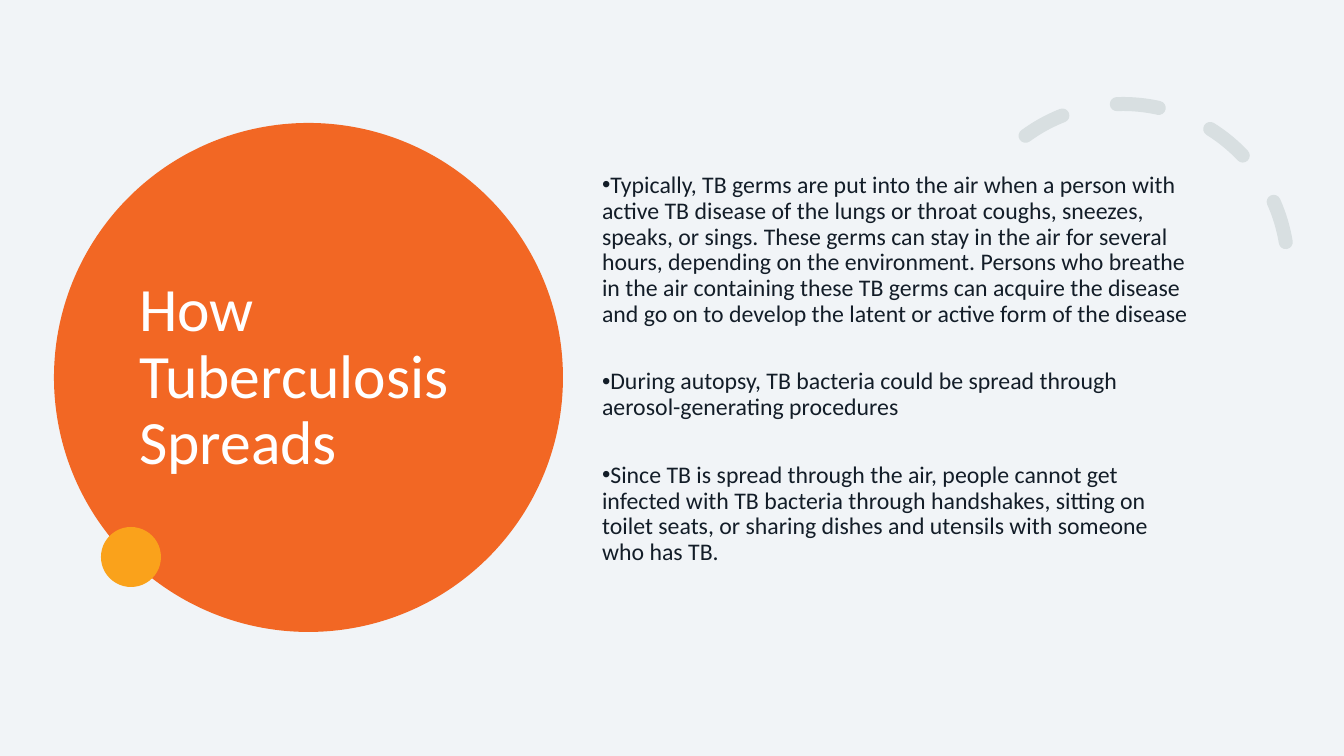
"""Build a slide on how tuberculosis spreads."""
from dataclasses import dataclass

import lxml.etree
import pptx
import pptx.dml.color
import pptx.enum.dml
import pptx.enum.shapes
import pptx.enum.text
import pptx.oxml.ns
import pptx.util

TITLE = "How Tuberculosis Spreads"
FACTS = [
    "Typically, TB germs are put into the air when a person with active TB disease of the lungs "
    "or throat coughs, sneezes, speaks, or sings. These germs can stay in the air for several "
    "hours, depending on the environment. Persons who breathe in the air containing these TB "
    "germs can acquire the disease and go on to develop the latent or active form of the disease",
    "During autopsy, TB bacteria could be spread through aerosol-generating procedures",
    "Since TB is spread through the air, people cannot get infected with TB bacteria through "
    "handshakes, sitting on toilet seats, or sharing dishes and utensils with someone who has TB.",
]
PAGE_SIZE = (1344, 756)
TITLE_AREA = (129, 154, 357, 449)
FACTS_AREA = (592, 168, 610, 433)
ARC_AREA = (958, 104, 330, 330)
BULLET_INDENT = 25


@dataclass(frozen=True)
class Theme:
    font: str = "Calibri"
    background: str = "F1F4F7"
    disc: str = "F26724"
    dot: str = "FAA21B"
    arc: str = "D8DFE1"
    title: str = "FFFFFF"
    body: str = "131D28"
    title_size: int = 44
    body_size: int = 17


THEME = Theme()
DISCS = [((54, 123, 509, 509), THEME.disc), ((101, 527, 60, 60), THEME.dot)]


def px(length):
    return pptx.util.Emu(round(length * 914400 / 100.8))


def color(value):
    return pptx.dml.color.RGBColor.from_string(value)


def add_disc(page, area, fill):
    disc = page.shapes.add_shape(pptx.enum.shapes.MSO_SHAPE.OVAL, *map(px, area))
    disc.shadow.inherit = False
    disc.fill.solid()
    disc.fill.fore_color.rgb = color(fill)
    disc.line.fill.background()


def add_dashed_arc(page):
    arc = page.shapes.add_shape(pptx.enum.shapes.MSO_SHAPE.ARC, *map(px, ARC_AREA))
    arc.shadow.inherit = False
    arc.adjustments[0] = 158.17
    arc.adjustments[1] = 17.81
    arc.rotation = 330.2
    arc.fill.background()
    arc.line.color.rgb = color(THEME.arc)
    arc.line.width = pptx.util.Pt(10)
    arc.line.dash_style = pptx.enum.dml.MSO_LINE.DASH
    arc.line._ln.set("cap", "rnd")


def place_text(box, area, anchor):
    box.left, box.top, box.width, box.height = map(px, area)
    frame = box.text_frame
    frame.word_wrap = True
    frame.auto_size = pptx.enum.text.MSO_AUTO_SIZE.NONE
    frame.vertical_anchor = anchor
    box.element.getparent().append(box.element)
    return frame


def write(para, text, size, ink, before=0, after=0):
    para.alignment = pptx.enum.text.PP_ALIGN.LEFT
    para.line_spacing = 0.9
    para.space_before = pptx.util.Pt(before)
    para.space_after = pptx.util.Pt(after)
    span = para.add_run()
    span.text = text
    span.font.name = THEME.font
    span.font.size = pptx.util.Pt(size)
    span.font.color.rgb = color(ink)


def add_bullet(para):
    properties = para._p.get_or_add_pPr()
    properties.set("marL", "0")
    properties.set("indent", str(-px(BULLET_INDENT)))
    bullet = lxml.etree.SubElement(properties, pptx.oxml.ns.qn("a:buChar"))
    bullet.set("char", "•")


def main():
    deck = pptx.Presentation()
    deck.slide_width, deck.slide_height = map(px, PAGE_SIZE)
    page = deck.slides.add_slide(deck.slide_layouts[1])
    page.background.fill.solid()
    page.background.fill.fore_color.rgb = color(THEME.background)

    for area, fill in DISCS:
        add_disc(page, area, fill)
    add_dashed_arc(page)

    anchors = pptx.enum.text.MSO_ANCHOR
    title = place_text(page.shapes.title, TITLE_AREA, anchors.MIDDLE)
    write(title.paragraphs[0], TITLE, THEME.title_size, THEME.title)

    body = place_text(page.placeholders[1], FACTS_AREA, anchors.TOP)
    for index, fact in enumerate(FACTS):
        para = body.add_paragraph() if index else body.paragraphs[0]
        write(para, fact, THEME.body_size, THEME.body, before=24 if index else 0, after=6)
        add_bullet(para)

    deck.save("out.pptx")


if __name__ == "__main__":
    main()
